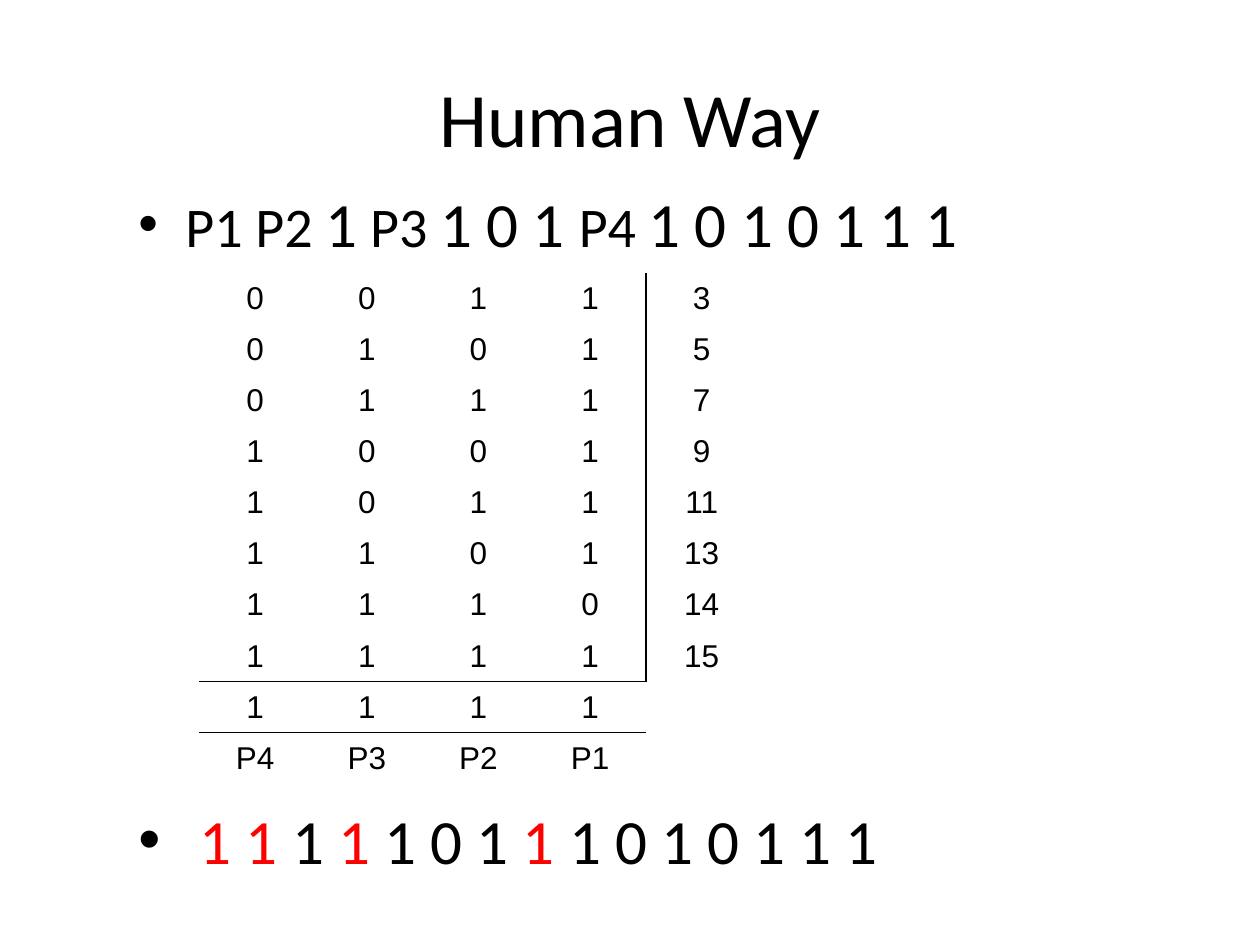
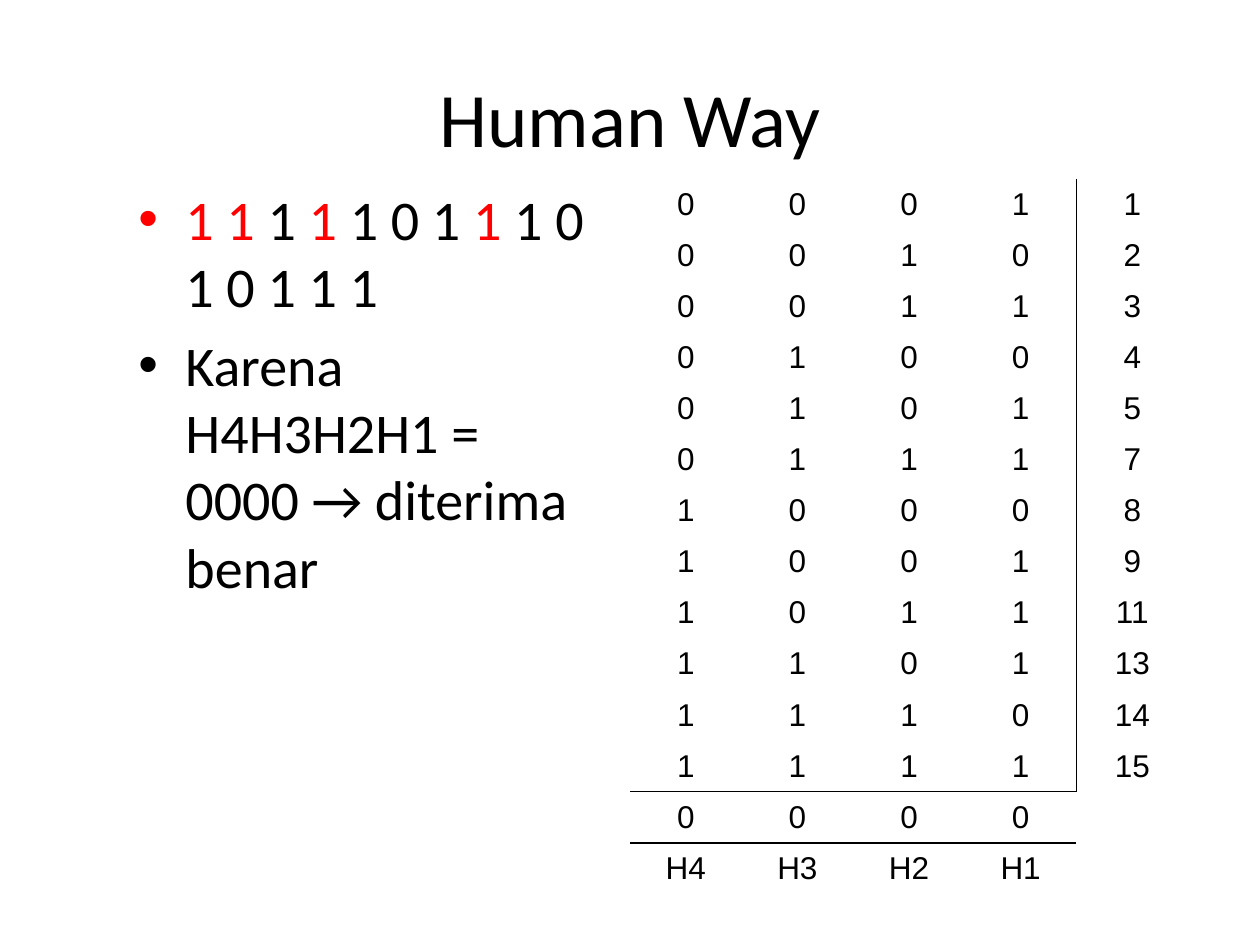
from dataclasses import dataclass
from functools import reduce

from lxml.etree import SubElement
from pptx import Presentation
from pptx.dml.color import RGBColor
from pptx.enum.text import MSO_ANCHOR as Anchor, PP_ALIGN as Align
from pptx.oxml.ns import qn
from pptx.util import Cm, Pt


@dataclass(frozen=True)
class Theme:
    ink: str = "000000"
    parity: str = "FF0000"
    paper: str = "FFFFFF"
    body_font: str = "Calibri"
    table_font: str = "Arial"
    title_size: int = 44
    large: int = 36
    body: int = 32
    table: int = 18
    rule: int = 1


THEME = Theme()
PLAIN_TABLE = "{2D5ABB26-0587-4C30-8999-92F81FD0307C}"  # no style, no grid

# Content: a paragraph is (runs, size, space before); a run is (text, colour, size or None).
INK, RED = THEME.ink, THEME.parity
TITLE = "Human Way"
CODEWORD = [
    ("1 1", RED, None), (" 1 ", INK, None), ("1", RED, None), (" 1 0 1 ", INK, None),
    ("1", RED, None), (" 1 0 1 0 1 1 1", INK, None),
]
DATA_WITH_GAPS = [
    ("P1 P2 ", INK, THEME.body), ("1", INK, None), (" P3 ", INK, THEME.body),
    ("1 0 1 ", INK, None), ("P4 ", INK, THEME.body), ("1 0 1 0 1 1 1", INK, None),
]
VERDICT = [("Karena H4H3H2H1 = 0000 → diterima benar", INK, None)]

SLIDES = [
    {
        "bullets": [
            (DATA_WITH_GAPS, THEME.large, 0),
            ([(" ", INK, None)] + CODEWORD, THEME.large, 309),
        ],
        "bullets_width": 20.32,
        "one_positions": [3, 5, 7, 9, 11, 13, 14, 15],
        "check_letter": "P",
        "table_at": (4.02, 5.5),
    },
    {
        "bullets": [(CODEWORD, THEME.body, 0), (VERDICT, THEME.body, 6.4)],
        "bullets_width": 9.74,
        "one_positions": [1, 2, 3, 4, 5, 7, 8, 9, 11, 13, 14, 15],
        "check_letter": "H",
        "table_at": (12.7, 3.6),
    },
]

BITS = 4
COLUMN_WIDTH, ROW_HEIGHT = Cm(2.25), Cm(1.03)
BULLET_INDENT = Cm(0.95)


def style(font, name, size, colour=INK):
    font.name, font.size = name, Pt(size)
    font.color.rgb = RGBColor.from_string(colour)


def add_title(slide):
    frame = slide.shapes.add_textbox(Cm(1.27), Cm(0.76), Cm(22.86), Cm(3.18)).text_frame
    frame.word_wrap, frame.vertical_anchor = True, Anchor.MIDDLE
    title = frame.paragraphs[0]
    title.text, title.alignment = TITLE, Align.CENTER
    style(title.font, THEME.body_font, THEME.title_size)


def add_bullets(slide, bullets, width):
    frame = slide.shapes.add_textbox(Cm(2.54), Cm(3.6), Cm(width), Cm(14.18)).text_frame
    frame.word_wrap = True
    for index, (runs, size, space_before) in enumerate(bullets):
        bullet = frame.add_paragraph() if index else frame.paragraphs[0]
        props = bullet._p.get_or_add_pPr()
        props.set("marL", str(BULLET_INDENT))
        props.set("indent", str(-BULLET_INDENT))
        SubElement(props, qn("a:buFont"), typeface=THEME.table_font)
        SubElement(props, qn("a:buChar"), char="•")
        bullet.space_before = Pt(space_before)
        for text, colour, run_size in runs:
            run = bullet.add_run()
            run.text = text
            style(run.font, THEME.body_font, run_size or size, colour)


def parity_rows(positions, letter):
    """Each position in binary beside its number, then the XOR of all and the check names."""
    def bits(number):
        return list(f"{number:0{BITS}b}")

    check = reduce(lambda total, position: total ^ position, positions)
    names = [f"{letter}{n}" for n in range(BITS, 0, -1)]
    return [bits(p) + [str(p)] for p in positions] + [bits(check) + [""], names + [""]]


def add_border(cell, side):
    line = SubElement(cell._tc.get_or_add_tcPr(), qn(f"a:ln{side}"), w=str(Pt(THEME.rule)))
    fill = SubElement(line, qn("a:solidFill"))
    SubElement(fill, qn("a:srgbClr"), val=THEME.ink)


def add_parity_table(slide, positions, letter, at):
    rows = parity_rows(positions, letter)
    left, top = map(Cm, at)
    columns, last = BITS + 1, len(positions) - 1
    frame = slide.shapes.add_table(len(rows), columns, left, top,
                                   COLUMN_WIDTH * columns, ROW_HEIGHT * len(rows))
    table = frame.table
    table.first_row = table.horz_banding = False
    table._tbl.tblPr.find(qn("a:tableStyleId")).text = PLAIN_TABLE
    for column in table.columns:
        column.width = COLUMN_WIDTH
    for r, row in enumerate(rows):
        table.rows[r].height = ROW_HEIGHT
        for c, value in enumerate(row):
            cell = table.cell(r, c)
            borders = {
                "L": c == BITS and r <= last,
                "R": c == BITS - 1 and r <= last,
                "T": c < BITS and r == last + 1,
                "B": c < BITS and r == last,
            }
            for side, drawn in borders.items():
                if drawn:
                    add_border(cell, side)
            cell.fill.background()
            cell.vertical_anchor = Anchor.MIDDLE
            entry = cell.text_frame.paragraphs[0]
            entry.text, entry.alignment = value, Align.CENTER
            style(entry.font, THEME.table_font, THEME.table)


def main():
    deck = Presentation()
    deck.slide_width, deck.slide_height = Cm(25.4), Cm(19.05)
    for content in SLIDES:
        slide = deck.slides.add_slide(deck.slide_layouts[6])
        background = slide.background.fill
        background.solid()
        background.fore_color.rgb = RGBColor.from_string(THEME.paper)
        add_title(slide)
        add_bullets(slide, content["bullets"], content["bullets_width"])
        add_parity_table(slide, content["one_positions"], content["check_letter"],
                         content["table_at"])
    deck.save("out.pptx")


if __name__ == "__main__":
    main()
